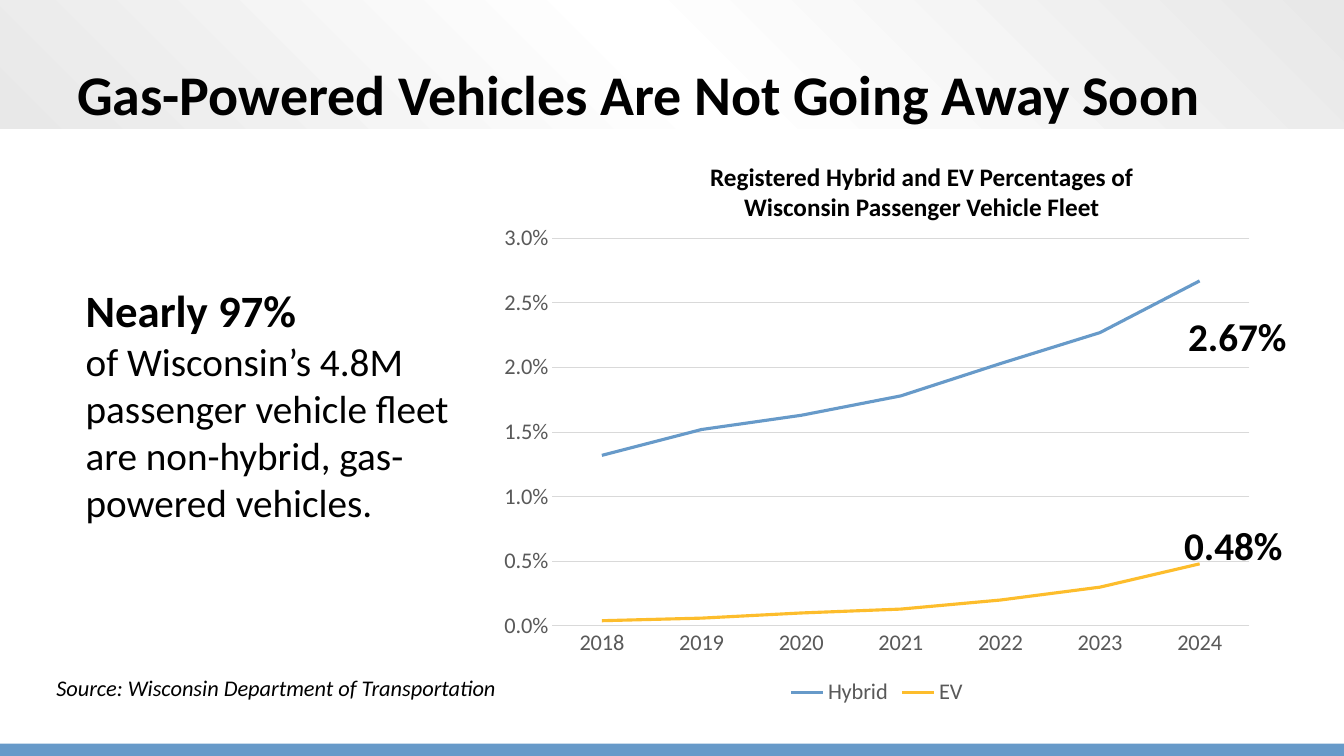
from lxml import etree
from pptx import Presentation, util as u
from pptx.chart.data import CategoryChartData
from pptx.dml.color import RGBColor
from pptx.enum import chart as ch, shapes, text
from pptx.oxml import parse_xml
from pptx.oxml.ns import nsdecls


class Theme:
    font = "Calibri"
    ink, muted, grid = "000000", "595959", "D9D9D9"
    blue, gold = "679AC9", "FDBD2C"
    shade, white = "E8E8E8", "FFFFFF"
    title, lead, body, heading, small = 40, 32, 28, 18, 16


def set_all(obj, values):
    for name, value in values.items():
        setattr(obj, name, value)


def set_font(font, size, color=Theme.ink, **flags):
    set_all(font, dict(name=Theme.font, size=u.Pt(size), **flags))
    font.color.rgb = RGBColor.from_string(color)


def set_line(line, color, width):
    line.color.rgb = RGBColor.from_string(color)
    line.width = u.Pt(width)


class SlideBuilder:
    def __init__(self, prs):
        self.theme = Theme
        self.s = prs.slides.add_slide(prs.slide_layouts[6])

    def band(self, box, color):
        sp = self.s.shapes.add_shape(shapes.MSO_SHAPE.RECTANGLE, *map(u.Cm, box))
        sp.shadow.inherit = False
        sp.line.fill.background()
        sp.fill.solid()
        sp.fill.fore_color.rgb = RGBColor.from_string(color)
        return sp

    def radial_band(self, box, stops):
        sp = self.band(box, self.theme.white)
        gs = "".join(f'<a:gs pos="{pos * 1000}"><a:srgbClr val="{color}"/></a:gs>'
                     for pos, color in stops)
        grad = parse_xml(
            f'<a:gradFill {nsdecls("a")} rotWithShape="1"><a:gsLst>{gs}</a:gsLst>'
            '<a:path path="circle"><a:fillToRect t="100000" r="100000"/></a:path>'
            '</a:gradFill>')
        spPr = sp._element.spPr
        solid = spPr.find("{*}solidFill")
        spPr.replace(solid, grad)

    def text(self, box, lines, wrap=True, align=text.PP_ALIGN.LEFT,
             anchor=text.MSO_ANCHOR.TOP):
        """Each line is (wording, size, font flags)."""
        tf = self.s.shapes.add_textbox(*map(u.Cm, box)).text_frame
        set_all(tf, dict(word_wrap=wrap, vertical_anchor=anchor))
        for i, (words, size, flags) in enumerate(lines):
            p = tf.add_paragraph() if i else tf.paragraphs[0]
            p.alignment = align
            r = p.add_run()
            r.text = words
            set_font(r.font, size, **flags)

    def line_chart(self, box, cats, series):
        """Each series is (name, color, values)."""
        t = self.theme
        data = CategoryChartData(number_format="0.0%")
        data.categories = cats
        for name, _, values in series:
            data.add_series(name, values)
        chart = self.s.shapes.add_chart(
            ch.XL_CHART_TYPE.LINE, *map(u.Cm, box), data).chart
        set_all(chart, dict(has_title=False, has_legend=True))
        set_font(chart.font, t.small, t.muted)
        set_all(chart.legend, dict(position=ch.XL_LEGEND_POSITION.BOTTOM,
                                   include_in_layout=False))
        set_font(chart.legend.font, t.small, t.muted)

        # Axes
        cat, val = chart.category_axis, chart.value_axis
        for axis in (cat, val):
            set_all(axis, dict(major_tick_mark=ch.XL_TICK_MARK.NONE,
                               minor_tick_mark=ch.XL_TICK_MARK.NONE))
            set_font(axis.tick_labels.font, t.small, t.muted)
        set_line(cat.format.line, t.grid, 0.75)
        set_all(val, dict(minimum_scale=0, maximum_scale=0.03, major_unit=0.005,
                          has_major_gridlines=True))
        set_all(val.tick_labels, dict(number_format="0.0%",
                                      number_format_is_linked=False))
        val.format.line.fill.background()
        set_line(val.major_gridlines.format.line, t.grid, 0.75)

        # Series
        plot = chart.plots[0]
        plot.vary_by_categories = False
        for line, (_, color, _) in zip(plot.series, series):
            line.smooth = False
            line.marker.style = ch.XL_MARKER_STYLE.NONE
            set_line(line.format.line, color, 2.25)


def main():
    t = Theme
    bold, italic = dict(bold=True), dict(italic=True)
    prs = Presentation()
    set_all(prs, dict(slide_width=u.Cm(33.87), slide_height=u.Cm(19.05)))
    slide = SlideBuilder(prs)

    # Header and footer bands
    slide.radial_band((0, 0, 33.87, 3.25),
                      [(0, t.shade), (50, t.white), (100, t.shade)])
    slide.band((0, 18.74, 33.87, 0.31), t.blue)

    # Title
    slide.text((1.7, 0.76, 30.48, 3.18),
               [("Gas-Powered Vehicles Are Not Going Away Soon", t.title, bold)],
               anchor=text.MSO_ANCHOR.MIDDLE)

    # Chart with its end values
    slide.line_chart(
        (12.32, 5.41, 19.56, 12.5), [str(year) for year in range(2018, 2025)],
        [("Hybrid", t.blue,
          (0.0132, 0.0152, 0.0163, 0.0178, 0.0203, 0.0227, 0.0267)),
         ("EV", t.gold,
          (0.0004, 0.0006, 0.001, 0.0013, 0.002, 0.003, 0.0048))])
    for left, top, value in ((29.69, 7.75, "2.67%"), (29.59, 13, "0.48%")):
        slide.text((left, top, 3.02, 1.45), [(value, t.body, bold)], wrap=False)

    # Key message
    slide.text((1.91, 7.01, 10.41, 6.4), [
        ("Nearly 97%", t.lead, bold),
        ("of Wisconsin’s 4.8M passenger vehicle fleet are non-hybrid, "
         "gas-powered vehicles.", t.body, {})])

    # Chart heading and source
    slide.text((14.58, 3.94, 17.3, 2.62), [
        ("Registered Hybrid and EV Percentages of", t.heading, bold),
        ("Wisconsin Passenger Vehicle Fleet", t.heading, bold)],
        align=text.PP_ALIGN.CENTER)
    slide.text((1.17, 16.87, 12.5, 0.94),
               [("Source: Wisconsin Department of Transportation", t.small, italic)])

    prs.save("out.pptx")


if __name__ == "__main__":
    main()
